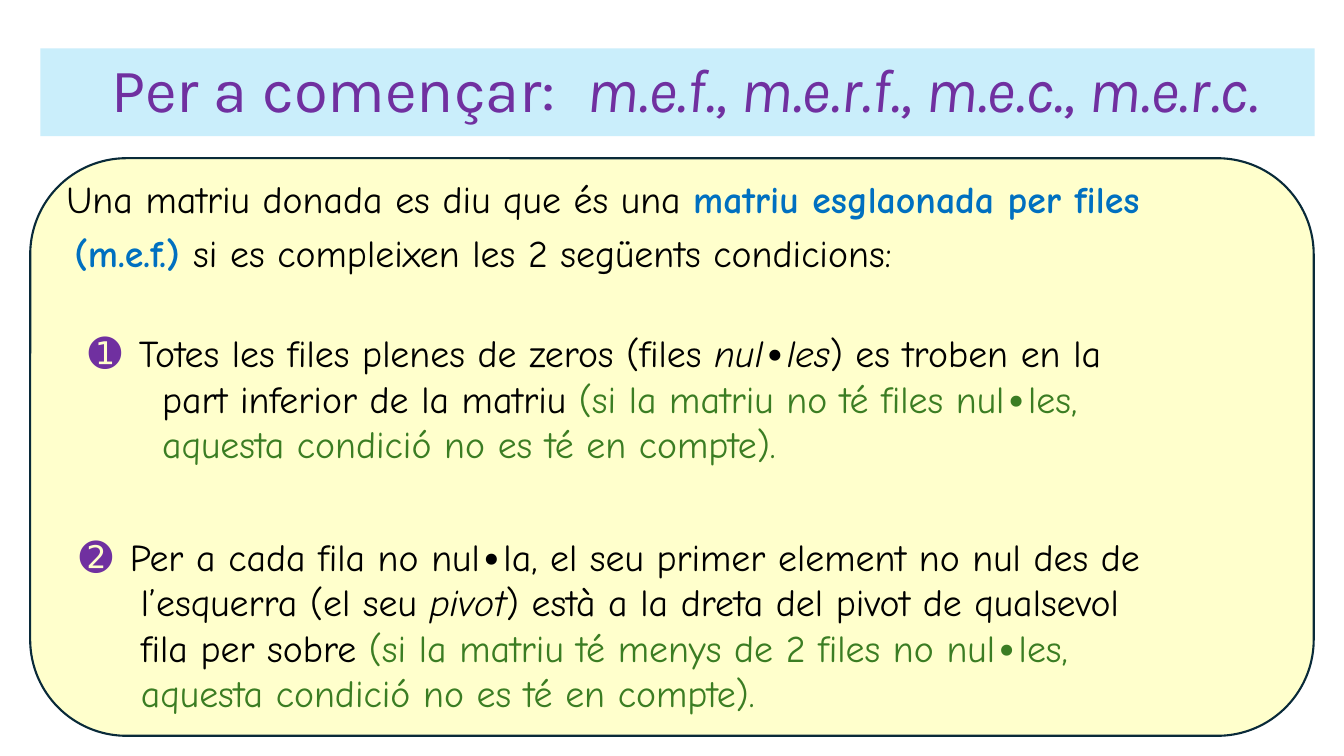
from pptx import Presentation
from pptx.dml.color import RGBColor
from pptx.enum.shapes import MSO_SHAPE
from pptx.enum.text import MSO_ANCHOR, PP_ALIGN
from pptx.oxml.ns import qn
from pptx.util import Inches, Pt
from lxml.etree import SubElement

PURPLE = RGBColor(0x70, 0x30, 0xA0)
BLUE = RGBColor(0x00, 0x70, 0xC0)
GREEN = RGBColor(0x3B, 0x7D, 0x23)
BLACK = RGBColor(0x00, 0x00, 0x00)
NAVY = RGBColor(0x09, 0x2A, 0x39)
SKY = RGBColor(0xCA, 0xEE, 0xFB)
CREAM = RGBColor(0xFF, 0xFF, 0xCC)
BADGE_TAB = 0.56


def add_run(p, text, size=27, font="Comic Neue", color=BLACK, bold=False, italic=False):
    r = p.add_run()
    r.text = text
    r.font.size = Pt(size)
    r.font.name = font
    r.font.color.rgb = color
    r.font.bold = bold
    r.font.italic = italic


def add_panel(slide, preset, box, fill, line=None):
    sp = slide.shapes.add_shape(preset, *map(Inches, box))
    sp.shadow.inherit = False
    sp.fill.solid()
    sp.fill.fore_color.rgb = fill
    if line is None:
        sp.line.fill.background()
    else:
        sp.line.color.rgb = line
        sp.line.width = Pt(1.5)
    return sp


def add_title(slide):
    sp = add_panel(slide, MSO_SHAPE.RECTANGLE, (0.4, 0.48, 12.64, 0.87), SKY)
    tf = sp.text_frame
    tf.vertical_anchor = MSO_ANCHOR.MIDDLE
    tf.margin_left = Inches(0.25)
    p = tf.paragraphs[0]
    p.alignment = PP_ALIGN.CENTER
    p.line_spacing = 0.9
    title = {"size": 44, "font": "Karla", "color": PURPLE}
    add_run(p, "Per a començar:  ", **title)
    add_run(p, "m.e.f., m.e.r.f., m.e.c., m.e.r.c.", italic=True, **title)


def add_lines(slide, box, lines, indents, badge=None, line_spacing=None, gap=0):
    """Each line is a list of (text, format) pairs; a badge opens the first line."""
    tf = slide.shapes.add_textbox(*map(Inches, box)).text_frame
    tf.word_wrap = True
    for i, (line, indent) in enumerate(zip(lines, indents)):
        p = tf.add_paragraph() if i else tf.paragraphs[0]
        pPr = p._p.get_or_add_pPr()
        pPr.set("marL", str(Inches(indent)))
        pPr.set("indent", "0")
        if badge and i == 0:
            tabs = SubElement(pPr, qn("a:tabLst"))
            SubElement(tabs, qn("a:tab"), pos=str(Inches(BADGE_TAB)), algn="l")
            add_run(p, badge + "\t", size=28, color=PURPLE)
        if line_spacing:
            p.line_spacing = line_spacing
        if gap and i:
            p.space_before = Pt(gap)
        for text, style in line:
            add_run(p, text, **style)


def main():
    prs = Presentation()
    prs.slide_width, prs.slide_height = Inches(13.33), Inches(7.5)
    slide = prs.slides.add_slide(prs.slide_layouts[6])

    plain, italic = {}, {"italic": True}
    term = {"color": BLUE, "bold": True}
    remark = {"color": GREEN}

    add_panel(slide, MSO_SHAPE.ROUNDED_RECTANGLE, (0.3, 1.57, 12.73, 5.73), CREAM, NAVY)
    add_lines(slide, (0.4, 1.74, 12.64, 1.3), [
        [("Una matriu donada es diu que és una ", plain),
         ("matriu esglaonada per files", term)],
        [("(m.e.f.) ", term), ("si es compleixen les 2 següents condicions:", plain)],
    ], [0.16, 0.24], line_spacing=0.9, gap=10)
    add_lines(slide, (0.78, 3.21, 12.26, 1.78), [
        [("Totes les files plenes de zeros (files ", plain), ("nul∙les", italic),
         (") es troben en la", plain)],
        [("part inferior de la matriu ", plain),
         ("(si la matriu no té files nul∙les,", remark)],
        [("aquesta condició no es té en compte).", remark)],
    ], [0, 0.73, 0.73], badge="➊")
    add_lines(slide, (0.69, 5.23, 11.78, 2.24), [
        [("Per a cada fila no nul∙la, el seu primer element no nul des de", plain)],
        [("l’esquerra (el seu ", plain), ("pivot", italic),
         (") està a la dreta del pivot de qualsevol", plain)],
        [("fila per sobre ", plain),
         ("(si la matriu té menys de 2 files no nul∙les,", remark)],
        [("aquesta condició no es té en compte).", remark)],
    ], [0, 0.61, 0.61, 0.61], badge="➋")
    add_title(slide)
    prs.save("out.pptx")


if __name__ == "__main__":
    main()
